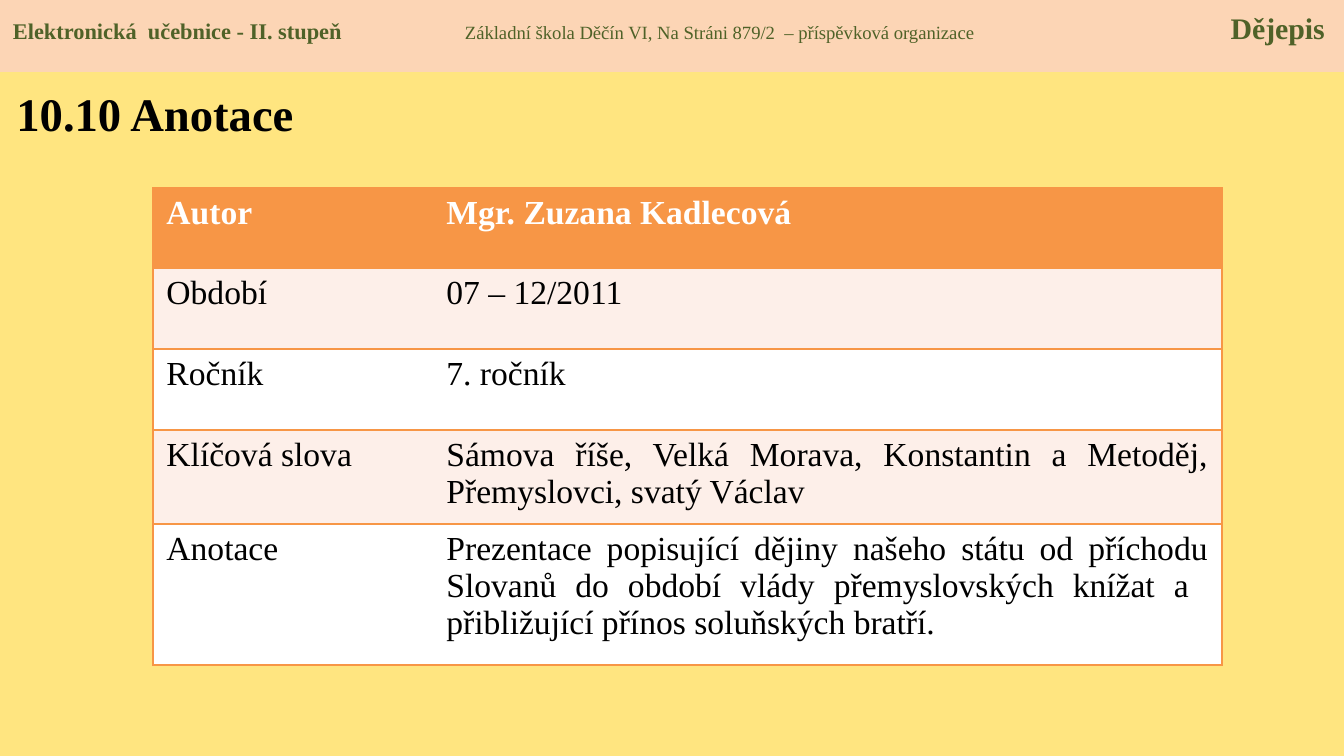
import pptx
import pptx.util
import pptx.dml.color
import pptx.enum.shapes
import pptx.enum.text
import pptx.oxml
import pptx.oxml.ns

PX = 914400 / 134.4
FONT = "Times New Roman"
HUE = {
    "page": "FFE580",
    "band": "FCD5B5",
    "green": "4F6228",
    "head": "F79646",
    "tint": "FDEFE9",
    "white": "FFFFFF",
    "black": "000000",
}
NS = pptx.oxml.ns.nsdecls("a")
ALIGN = pptx.enum.text.PP_ALIGN
TOP = pptx.enum.text.MSO_ANCHOR.TOP


def px(*nums):
    return [pptx.util.Emu(round(n * PX)) for n in nums]


def write(para, text, size=18, color="black", bold=False, align=ALIGN.LEFT):
    """Add one formatted run to a paragraph."""
    para.alignment = align
    run = para.add_run()
    run.text = text
    font = run.font
    font.name, font.size, font.bold = FONT, pptx.util.Pt(size), bold
    font.color.rgb = pptx.dml.color.RGBColor.from_string(HUE[color])


deck = pptx.Presentation()
deck.slide_width, deck.slide_height = px(1344, 756)
slide = deck.slides.add_slide(deck.slide_layouts[5])
back = slide.background.fill
back.solid()
back.fore_color.rgb = pptx.dml.color.RGBColor.from_string(HUE["page"])

# Header band: one line, spread by tab stops
band = slide.shapes.add_shape(
    pptx.enum.shapes.MSO_SHAPE.RECTANGLE, *px(0, 0, 1344, 72))
band.shadow.inherit = False
band.fill.solid()
band.fill.fore_color.rgb = pptx.dml.color.RGBColor.from_string(HUE["band"])
band.line.fill.background()
frame = band.text_frame
frame.vertical_anchor = TOP
frame.margin_left, frame.margin_right, frame.margin_top = px(13, 13, 10)
line = frame.paragraphs[0]
mid, end = px(452, 1312)
line._p.get_or_add_pPr().append(pptx.oxml.parse_xml(
    f'<a:tabLst {NS}><a:tab pos="{mid}" algn="l"/>'
    f'<a:tab pos="{end}" algn="r"/></a:tabLst>'))
for text, size, bold in [
    ("Elektronická  učebnice - II. stupeň", 12, True),
    ("\tZákladní škola Děčín VI, Na Stráni 879/2  – příspěvková organizace",
     10, False),
    ("\tDějepis", 16, True),
]:
    write(line, text, size=size, color="green", bold=bold)

# Title
title = slide.shapes.title
title.left, title.top, title.width, title.height = px(3, 78, 563, 87)
title.text_frame.vertical_anchor = TOP
write(title.text_frame.paragraphs[0], "10.10 Anotace", size=25, bold=True)

# Table
rows = [
    ("Autor", "Mgr. Zuzana Kadlecová", 80),
    ("Období", "07 – 12/2011", 81),
    ("Ročník", "7. ročník", 81),
    ("Klíčová slova", "Sámova říše, Velká Morava, Konstantin a Metoděj, "
     "Přemyslovci, svatý Václav", 94),
    ("Anotace", "Prezentace popisující dějiny našeho státu od příchodu "
     "Slovanů do období vlády přemyslovských knížat a  přibližující "
     "přínos soluňských bratří.", 141),
]
grid = slide.shapes.add_table(
    len(rows), 2, *px(153, 188, 1069, sum(row[2] for row in rows))).table
for col, wide in zip(grid.columns, px(280, 789)):
    col.width = wide

for r, (label, value, tall) in enumerate(rows):
    grid.rows[r].height = px(tall)[0]
    fill = "head" if r == 0 else ("tint" if r % 2 else "white")
    for c, text in enumerate((label, value)):
        cell = grid.cell(r, c)
        props = cell._tc.get_or_add_tcPr()
        inner = "R" if c == 0 else "L"
        for side in "LRTB":
            paint = "<a:noFill/>" if side == inner else (
                f'<a:solidFill><a:srgbClr val="{HUE["head"]}"/></a:solidFill>')
            props.append(pptx.oxml.parse_xml(
                f'<a:ln{side} {NS} w="12700">{paint}</a:ln{side}>'))
        cell.fill.solid()
        cell.fill.fore_color.rgb = pptx.dml.color.RGBColor.from_string(HUE[fill])
        write(cell.text_frame.paragraphs[0], text, bold=r == 0,
              color="black" if r else "white",
              align=ALIGN.JUSTIFY if c and r > 2 else ALIGN.LEFT)

deck.save("out.pptx")
